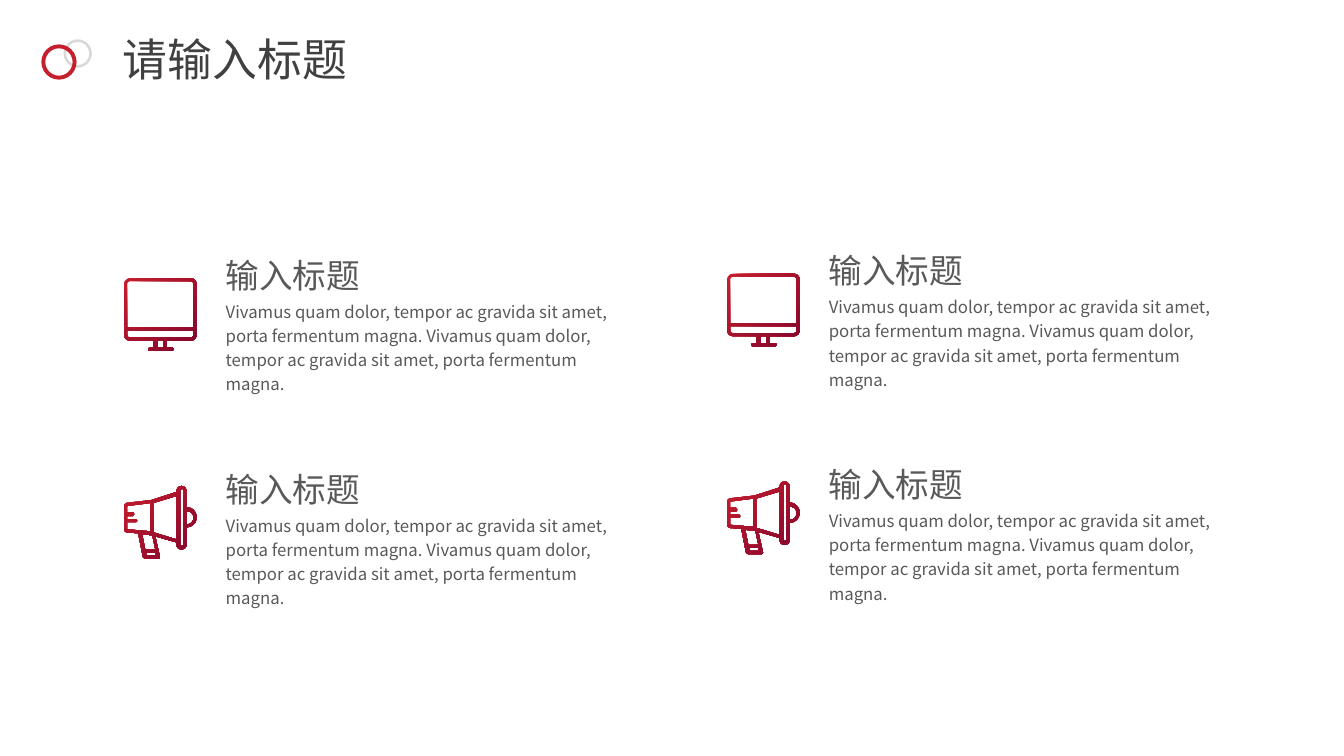
import math

import pptx
import pptx.dml.color
import pptx.enum.shapes
import pptx.enum.text
import pptx.oxml.ns
import pptx.util
from lxml import etree

Pt = pptx.util.Pt
RGBColor = pptx.dml.color.RGBColor

FONT = "Noto Sans CJK SC"
RED = RGBColor(0xC5, 0x1F, 0x2D)
DARK_RED = RGBColor(0x83, 0x06, 0x2E)
LIGHT_GREY = RGBColor(0xD9, 0xD9, 0xD9)
TITLE_GREY = RGBColor(0x40, 0x40, 0x40)
TEXT_GREY = RGBColor(0x59, 0x59, 0x59)

HEADING = "输入标题"
SENTENCE = "Vivamus quam dolor, tempor ac gravida sit amet, porta fermentum magna."
BODY = f"{SENTENCE} {SENTENCE}"

# Icon contours: corners as (x, y, corner radius), in units of 0.72 pt.
ICON_UNIT = 0.72
MONITOR = [
    [(0, 0, 6), (72, 0, 6), (72, 62, 6), (42, 62, 0), (42, 69, 0), (49, 69, 1.5),
     (49, 72, 1.5), (24, 72, 1.5), (24, 69, 1.5), (29, 69, 0), (29, 62, 0), (0, 62, 6)],
    [(3, 3, 3), (69, 3, 3), (69, 49, 0), (3, 49, 0)],
    [(3, 52, 0), (69, 52, 0), (69, 59, 3), (3, 59, 3)],
    [(33, 62, 0), (39, 62, 0), (39, 69, 0), (33, 69, 0)],
]
MEGAPHONE = [
    [(62, 21, 0), (62, 0, 5), (52, 0, 5), (52, 6, 0), (27, 14, 0), (0, 17, 3),
     (0, 46, 3), (14, 47, 0), (19, 72, 2), (36, 72, 2), (31, 50, 0), (52, 56, 0),
     (52, 63, 5), (62, 63, 5), (62, 41, 0), (72, 41, 10), (72, 21, 10)],
    [(62, 25, 0), (69, 25, 6.5), (69, 38, 6.5), (62, 38, 0)],
    [(56, 3, 1.5), (59, 3, 1.5), (59, 59, 1.5), (56, 59, 1.5)],
    [(29, 17, 0), (52, 10, 0), (52, 53, 0), (29, 46, 0)],
    [(22, 66, 0), (31, 66, 0), (32, 69, 0), (22, 69, 0)],
    [(18, 48, 0), (28, 49, 0), (31, 63, 0), (21, 63, 0)],
    [(3, 43, 0), (3, 36, 0), (13, 36, 1.5), (13, 33, 1.5), (3, 33, 0), (3, 30, 0),
     (10, 30, 2), (10, 26, 2), (3, 26, 0), (3, 20, 0), (26, 17, 0), (26, 45, 0)],
]


def round_corners(corners, steps=6):
    """Return the contour's points in EMU, each rounded corner drawn as a Bezier curve."""
    points = []
    for index, (x, y, radius) in enumerate(corners):
        if not radius:
            points.append((x, y))
            continue
        ends = []
        for near_x, near_y, _ in (corners[index - 1], corners[(index + 1) % len(corners)]):
            share = radius / math.dist((x, y), (near_x, near_y))
            ends.append(((near_x - x) * share, (near_y - y) * share))
        for step in range(steps + 1):
            t = step / steps
            before = (1 - t) ** 3 + 3 * (1 - t) ** 2 * t * 0.45
            after = t ** 3 + 3 * (1 - t) * t ** 2 * 0.45
            points.append((x + ends[0][0] * before + ends[1][0] * after,
                           y + ends[0][1] * before + ends[1][1] * after))
    return [(Pt(x * ICON_UNIT), Pt(y * ICON_UNIT)) for x, y in points]


def add_text(page, place, text, size, color, spacing=None):
    box = page.shapes.add_textbox(*map(Pt, place))
    frame = box.text_frame
    frame.word_wrap = spacing is not None
    frame.auto_size = pptx.enum.text.MSO_AUTO_SIZE.SHAPE_TO_FIT_TEXT
    para = frame.paragraphs[0]
    para.line_spacing = spacing
    span = para.add_run()
    span.text = text
    for name, value in {"name": FONT, "size": Pt(size)}.items():
        setattr(span.font, name, value)
    span.font.color.rgb = color
    east_asian = etree.SubElement(span.font._element, pptx.oxml.ns.qn("a:ea"))
    east_asian.set("typeface", FONT)


deck = pptx.Presentation()
deck.slide_width, deck.slide_height = Pt(960), Pt(540)
page = deck.slides.add_slide(deck.slide_layouts[6])

rings = page.shapes.add_group_shape()
for left, top, size, thickness, color in [
    (45.4, 28.1, 20.2, 0.092, LIGHT_GREY),
    (29.5, 31.7, 25.2, 0.112, RED),
]:
    ring = rings.shapes.add_shape(
        pptx.enum.shapes.MSO_SHAPE.DONUT, Pt(left), Pt(top), Pt(size), Pt(size))
    ring.adjustments[0] = thickness
    ring.shadow.inherit = False
    ring.fill.solid()
    ring.fill.fore_color.rgb = color
    ring.line.fill.background()

add_text(page, (80.6, 19.4, 176.4, 46.1), "请输入标题", 32, TITLE_GREY)

for column_left, column_top in [(88.6, 172.6), (519.4, 169.4)]:
    for row, (icon, icon_drop) in enumerate([(MONITOR, 26.1), (MEGAPHONE, 21.8)]):
        top = column_top + row * 152.7
        text_left = column_left + 65.5
        add_text(page, (text_left, top, 288.7, 39.6), HEADING, 24, TEXT_GREY, 1.2)
        add_text(page, (text_left, top + 36.4, 288.7, 59.8), BODY, 12, TEXT_GREY, 1.2)

        contours = [round_corners(corners) for corners in icon]
        builder = page.shapes.build_freeform(*contours[0][0])
        for index, points in enumerate(contours):
            if index:
                builder.move_to(*points[0])
            builder.add_line_segments(points[1:], close=True)
        symbol = builder.convert_to_shape(Pt(column_left), Pt(top + icon_drop))
        symbol.shadow.inherit = False
        symbol.line.fill.background()
        symbol.fill.gradient()
        symbol.fill.gradient_angle = 315
        for stop, color in zip(symbol.fill.gradient_stops, (RED, DARK_RED)):
            stop.color.rgb = color

deck.save("out.pptx")
